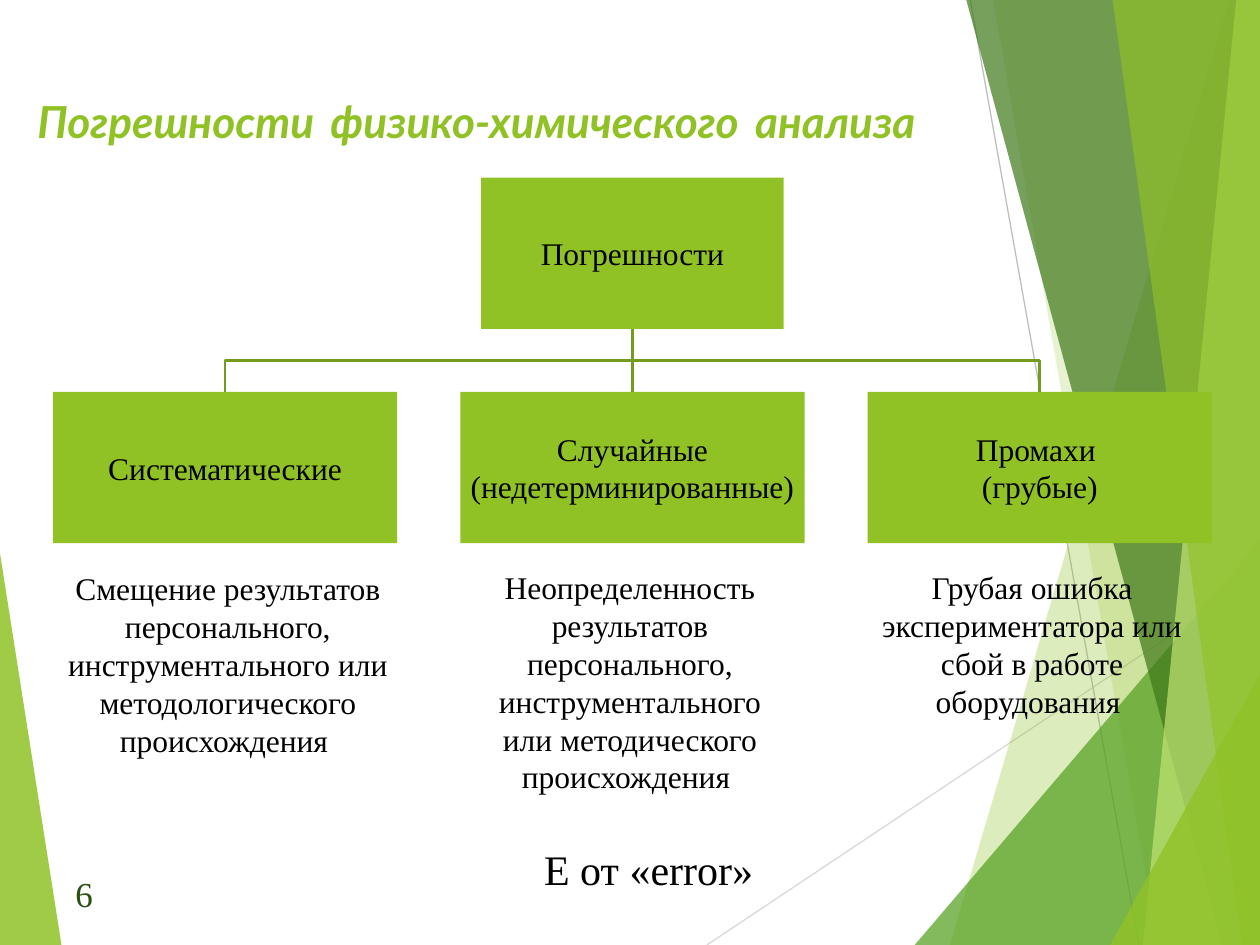
from lxml import etree
from pptx import Presentation
from pptx.dml.color import RGBColor
from pptx.enum.shapes import MSO_CONNECTOR, MSO_SHAPE
from pptx.enum.text import MSO_ANCHOR, PP_ALIGN
from pptx.oxml.ns import qn
from pptx.util import Cm, Pt

STRAIGHT = MSO_CONNECTOR.STRAIGHT
RECTANGLE = MSO_SHAPE.RECTANGLE
TOP, MIDDLE, BOTTOM = MSO_ANCHOR.TOP, MSO_ANCHOR.MIDDLE, MSO_ANCHOR.BOTTOM
LEFT, CENTER = PP_ALIGN.LEFT, PP_ALIGN.CENTER

GREEN = RGBColor(0x90, 0xC2, 0x26)
LEAF_GREEN = RGBColor(0x54, 0xA0, 0x21)
FOREST_GREEN = RGBColor(0x3F, 0x78, 0x19)
LIME = RGBColor(0xC0, 0xE4, 0x74)
BRANCH_GREEN = RGBColor(0x73, 0x9B, 0x1E)
NUMBER_GREEN = RGBColor(0x2A, 0x50, 0x10)
LIGHT_GRAY = RGBColor(0xD9, 0xD9, 0xD9)
GRAY = RGBColor(0xBF, 0xBF, 0xBF)
BLACK = RGBColor(0, 0, 0)

# Lengths in centimetres
WIDTH, HEIGHT = 25.4, 19.05
BOX_HEIGHT = 3.05
ROOT_LEFT, ROOT_TOP, ROOT_WIDTH = 9.7, 3.58, 6.1
KIND_LEFT, KIND_TOP, KIND_WIDTH, KIND_STEP = 1.07, 7.9, 6.94, 8.21
CAPTION_TOP = 11.33

BODY = {"name": "Times New Roman", "size": Pt(18), "color": BLACK}
TITLE_WORD = {"name": "Lato", "size": Pt(25.2), "bold": True, "italic": True,
              "color": GREEN}
TITLE_SPACE = TITLE_WORD | {"size": Pt(36), "bold": False, "italic": False}

# Box text, caption, caption left, caption width, caption height
KINDS = [
    (["Систематические"],
     "Смещение результатов персонального, инструментального или "
     "методологического происхождения ", 1.09, 7.01, 4.11),
    (["Случайные", "(недетерминированные)"],
     "Неопределенность результатов персонального, инструментального или "
     "методического происхождения ", 9.5, 6.4, 4.83),
    (["Промахи ", "(грубые)"],
     "Грубая ошибка экспериментатора или сбой в работе оборудования ",
     17.3, 7.01, 3.3),
]


def strip(top_x, bottom_x):
    """Outline from a slanted left edge to the right side of the slide."""
    return [(top_x, 0), (bottom_x, HEIGHT), (WIDTH, HEIGHT), (WIDTH, 0)]


def corner(bottom_x, right_y):
    """Triangle in the bottom right corner of the slide."""
    return [(bottom_x, HEIGHT), (WIDTH, right_y), (WIDTH, HEIGHT)]


# Outline, colour, opacity in percent
FACETS = [
    (strip(24.77, 19.15), GREEN, 30),
    (strip(20.02, 23.34), GREEN, 20),
    (corner(18.44, 10.9), LEAF_GREEN, 72),
    (strip(19.48, 24.64), FOREST_GREEN, 70),
    (strip(24.92, 23.04), LIME, 70),
    (strip(22.43, 25.04), GREEN, 65),
    (corner(22.38, 13.59), GREEN, 80),
]


def format_font(font, values):
    for name, value in values.items():
        if name == "color":
            font.color.rgb = value
        else:
            setattr(font, name, value)


def add_outline(slide, points, closed):
    (start_x, start_y), *others = [(Cm(x), Cm(y)) for x, y in points]
    builder = slide.shapes.build_freeform(start_x, start_y)
    builder.add_line_segments(others, close=closed)
    shape = builder.convert_to_shape()
    shape.shadow.inherit = False
    return shape


def add_facet(slide, points, color, opacity):
    shape = add_outline(slide, points, True)
    shape.fill.solid()
    shape.fill.fore_color.rgb = color
    shape.line.fill.background()
    color_element = next(shape.element.spPr.iter(qn("a:srgbClr")))
    alpha = etree.SubElement(color_element, qn("a:alpha"))
    alpha.set("val", str(opacity * 1000))


def add_line(slide, start, end, color, width):
    ends = [Cm(value) for value in (*start, *end)]
    connector = slide.shapes.add_connector(STRAIGHT, *ends)
    connector.line.color.rgb = color
    connector.line.width = Pt(width)
    etree.SubElement(connector.element.spPr, qn("a:effectLst"))
    return connector


def add_elbow(slide, start, end):
    """Bent branch that turns halfway down."""
    middle_y = (start[1] + end[1]) / 2
    points = [start, (start[0], middle_y), (end[0], middle_y), end]
    shape = add_outline(slide, points, False)
    shape.fill.background()
    shape.line.color.rgb = BRANCH_GREEN
    shape.line.width = Pt(1.5)


def fill_text(frame, lines, font, anchor, alignment, spacing=None):
    frame.word_wrap = True
    frame.vertical_anchor = anchor
    for index, line in enumerate(lines):
        paragraph = frame.add_paragraph() if index else frame.paragraphs[0]
        paragraph.alignment = alignment
        paragraph.line_spacing = spacing
        run = paragraph.add_run()
        run.text = line
        format_font(run.font, font)


def add_text(slide, lines, box, font=BODY, anchor=MIDDLE, alignment=LEFT,
             spacing=None):
    text_box = slide.shapes.add_textbox(*map(Cm, box))
    fill_text(text_box.text_frame, lines, font, anchor, alignment, spacing)


def add_box(slide, lines, left, top, width):
    box = slide.shapes.add_shape(
        RECTANGLE, Cm(left), Cm(top), Cm(width), Cm(BOX_HEIGHT))
    box.shadow.inherit = False
    box.fill.solid()
    box.fill.fore_color.rgb = GREEN
    box.line.fill.background()
    frame = box.text_frame
    for side in ("left", "right", "top", "bottom"):
        setattr(frame, f"margin_{side}", Cm(0.03))
    fill_text(frame, lines, BODY, MIDDLE, CENTER, Pt(21.6))
    return box


def add_background(slide):
    left_corner = [(0, 11.15), (1.24, HEIGHT), (0, HEIGHT)]
    add_facet(slide, left_corner, GREEN, 85)
    add_line(slide, (14.25, HEIGHT), (WIDTH, 11.61), LIGHT_GRAY, 0.75)
    add_line(slide, (19.56, 0), (22.96, HEIGHT), GRAY, 0.75)
    for points, color, opacity in FACETS:
        add_facet(slide, points, color, opacity)


def format_title(slide):
    title = slide.shapes.title
    slide.shapes.element.append(title.element)  # in front of the background
    title.left, title.top = Cm(0.5), Cm(1.37)
    title.width, title.height = Cm(22.86), Cm(1.8)
    title.text_frame.vertical_anchor = BOTTOM
    title.text_frame.word_wrap = True
    paragraph = title.text_frame.paragraphs[0]
    paragraph.alignment = LEFT
    for text in ("Погрешности", " ", "физико-химического", " ", "анализа"):
        run = paragraph.add_run()
        run.text = text
        format_font(run.font, TITLE_SPACE if text == " " else TITLE_WORD)


def add_error_tree(slide):
    trunk = (ROOT_LEFT + ROOT_WIDTH / 2, ROOT_TOP + BOX_HEIGHT)
    lefts = [KIND_LEFT + KIND_STEP * index for index in range(len(KINDS))]
    ends = [(left + KIND_WIDTH / 2, KIND_TOP) for left in lefts]
    add_elbow(slide, trunk, ends[2])
    stem = add_line(slide, trunk, ends[1], BRANCH_GREEN, 1.5)
    add_elbow(slide, trunk, ends[0])
    root = add_box(slide, ["Погрешности"], ROOT_LEFT, ROOT_TOP, ROOT_WIDTH)
    boxes = [add_box(slide, kind[0], left, KIND_TOP, KIND_WIDTH)
             for kind, left in zip(KINDS, lefts)]
    stem.begin_connect(root, 2)
    stem.end_connect(boxes[1], 0)
    for _, caption, left, width, height in KINDS:
        add_text(slide, [caption], (left, CAPTION_TOP, width, height),
                 alignment=CENTER, spacing=Pt(21.6))


def main():
    presentation = Presentation()
    presentation.slide_width, presentation.slide_height = Cm(WIDTH), Cm(HEIGHT)
    slide = presentation.slides.add_slide(presentation.slide_layouts[5])
    add_background(slide)
    format_title(slide)
    add_text(slide, ["6"], (1.27, 17.35, 5.92, 1.32),
             BODY | {"size": Pt(20), "color": NUMBER_GREEN})
    add_error_tree(slide)
    add_text(slide, ["E от «error»"], (10.72, 16.87, 6.58, 1.3),
             BODY | {"size": Pt(24)}, TOP)
    presentation.save("out.pptx")


if __name__ == "__main__":
    main()
